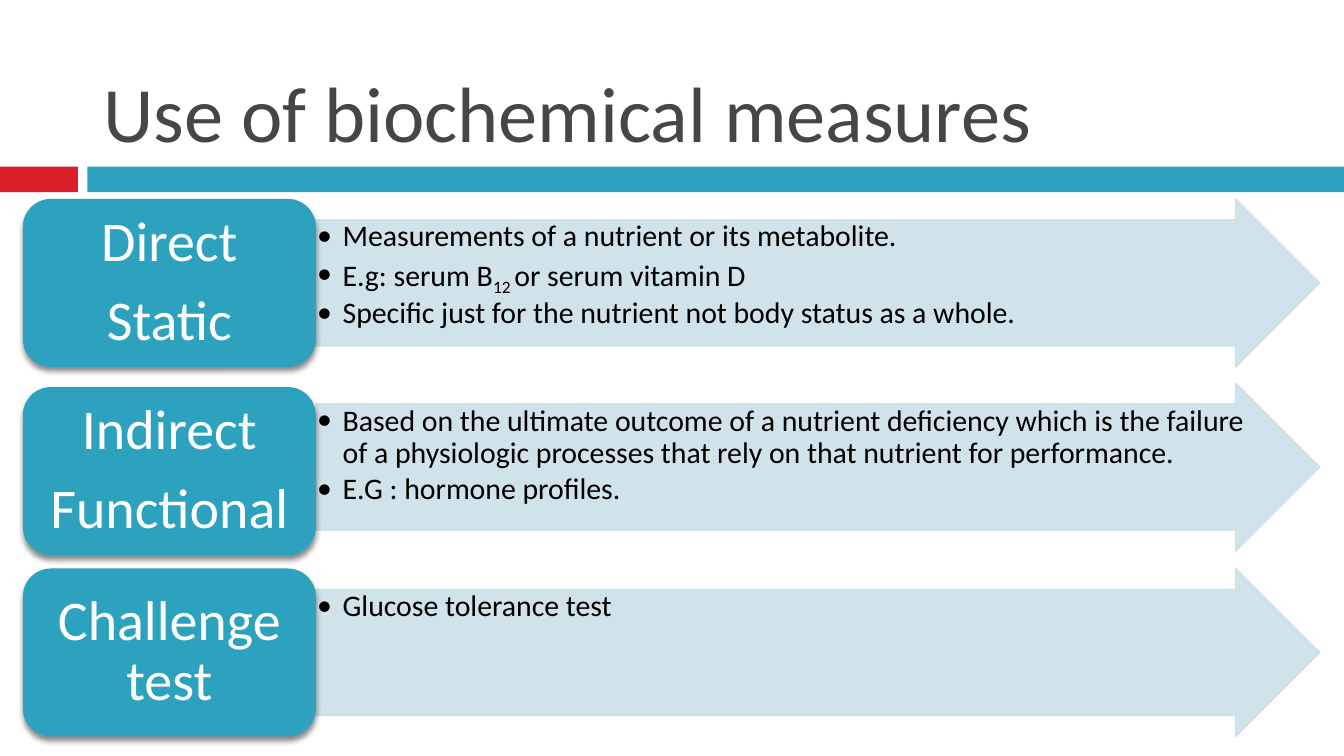
from dataclasses import dataclass
from lxml.etree import SubElement
from pptx import Presentation
from pptx.dml.color import RGBColor
from pptx.enum.shapes import MSO_SHAPE as SHAPE
from pptx.enum.text import MSO_ANCHOR as ANCHOR, MSO_AUTO_SIZE as AUTO, PP_ALIGN as ALIGN
from pptx.oxml.ns import qn
from pptx.util import Inches, Pt


@dataclass(frozen=True)
class Theme:
    font: str = "Calibri"
    red: str = "DA1F28"
    teal: str = "2DA2BF"
    pale: str = "CDE0E8"
    title: str = "464646"
    white: str = "FFFFFF"
    black: str = "000000"
    title_size: int = 42
    label_size: int = 30
    body_size: int = 16


class Deck:
    def __init__(self, theme):
        self.theme = theme
        self.prs = Presentation()
        self.prs.slide_width, self.prs.slide_height = Inches(10), Inches(10 * 9 / 16)
        self.s = self.prs.slides.add_slide(self.prs.slide_layouts[5])

    def frame(self, sp, anchor, margins):
        tf = sp.text_frame
        left, top = map(Inches, margins)
        values = dict(word_wrap=True, auto_size=AUTO.NONE, vertical_anchor=anchor,
                      margin_left=left, margin_right=left, margin_top=top, margin_bottom=top)
        for name, value in values.items():
            setattr(tf, name, value)
        return tf

    def paragraph(self, tf, first, runs, size, color, **values):
        p = tf.paragraphs[0] if first else tf.add_paragraph()
        for name, value in values.items():
            setattr(p, name, value)
        for text, baseline in runs:
            r = p.add_run()
            r.text = text
            for name, value in dict(name=self.theme.font, size=Pt(size), bold=False).items():
                setattr(r.font, name, value)
            r.font.color.rgb = RGBColor.from_string(color)
            if baseline:
                r._r.get_or_add_rPr().set("baseline", str(baseline * 1000))
        return p

    def shape(self, kind, box, color):
        sp = self.s.shapes.add_shape(kind, *map(Inches, box))
        sp.shadow.inherit = False
        sp.fill.solid()
        sp.fill.fore_color.rgb = RGBColor.from_string(color)
        sp.line.fill.background()
        return sp

    def title(self, text, box):
        sp = self.s.shapes.title
        for name, value in zip(("left", "top", "width", "height"), box):
            setattr(sp, name, Inches(value))
        tf = self.frame(sp, ANCHOR.BOTTOM, (0.1, 0.05))
        self.paragraph(tf, True, [(text, 0)], self.theme.title_size, self.theme.title,
                       alignment=ALIGN.LEFT)

    def arrow(self, box, points):
        sp = self.shape(SHAPE.RIGHT_ARROW, box, self.theme.pale)
        sp.adjustments[0], sp.adjustments[1] = 0.75, 0.5
        sp.line.color.rgb = RGBColor.from_string(self.theme.pale)
        sp.line.width = Pt(0.79)
        for color in sp._element.spPr.iter(qn("a:srgbClr")):
            SubElement(color, qn("a:alpha"), val="90000")
        tf = self.frame(sp, ANCHOR.TOP, (0.01, 0.01))
        for i, runs in enumerate(points):
            p = self.paragraph(tf, i == 0, runs, self.theme.body_size, self.theme.black,
                               level=1, alignment=ALIGN.LEFT, line_spacing=0.9, space_after=Pt(2))
            pPr = p._p.get_or_add_pPr()
            pPr.set("marL", str(Inches(0.19)))
            pPr.set("indent", str(Inches(-0.19)))
            SubElement(pPr, qn("a:buFont"), typeface=self.theme.font)
            SubElement(pPr, qn("a:buChar"), char="•")

    def label(self, box, lines):
        sp = self.shape(SHAPE.ROUNDED_RECTANGLE, box, self.theme.teal)
        effects = sp._element.spPr.find(qn("a:effectLst"))
        shadow = SubElement(effects, qn("a:outerShdw"), blurRad=str(Pt(3)), dist=str(Pt(2.4)),
                            dir="5400000", rotWithShape="0")
        color = SubElement(shadow, qn("a:srgbClr"), val=self.theme.black)
        SubElement(color, qn("a:alpha"), val="45000")
        tf = self.frame(sp, ANCHOR.MIDDLE, (0.12, 0.06))
        for i, line in enumerate(lines):
            self.paragraph(tf, i == 0, [(line, 0)], self.theme.label_size, self.theme.white,
                           alignment=ALIGN.CENTER, line_spacing=0.9, space_after=Pt(10))


MEASURES = [
    (1.48, 1.48, ["Direct", "Static"], [
        [("Measurements of a nutrient or its metabolite.", 0)],
        [("E.g: serum B", 0), ("12 ", -25), ("or serum vitamin D", 0)],
        [("Specific just for the nutrient not body status as a whole.", 0)],
    ]),
    (2.85, 2.88, ["Indirect", "Functional"], [
        [("Based on the ultimate outcome of a nutrient deficiency which is the failure "
          "of a physiologic processes that rely on that nutrient for performance.", 0)],
        [("E.G : hormone profiles.", 0)],
    ]),
    (4.23, 4.23, ["Challenge test"], [[("Glucose tolerance test", 0)]]),
]


def main():
    theme = Theme()
    deck = Deck(theme)
    deck.shape(SHAPE.RECTANGLE, (0, 1.24, 0.58, 0.19), theme.red)
    deck.shape(SHAPE.RECTANGLE, (0.65, 1.24, 9.35, 0.19), theme.teal)
    deck.title("Use of biochemical measures", (0.67, 0.13, 8.92, 1.1))
    for arrow_top, label_top, lines, points in MEASURES:
        deck.arrow((2.35, arrow_top, 7.47, 1.25), points)
        deck.label((0.17, label_top, 2.18, 1.25), lines)
    deck.prs.save("out.pptx")


if __name__ == "__main__":
    main()
